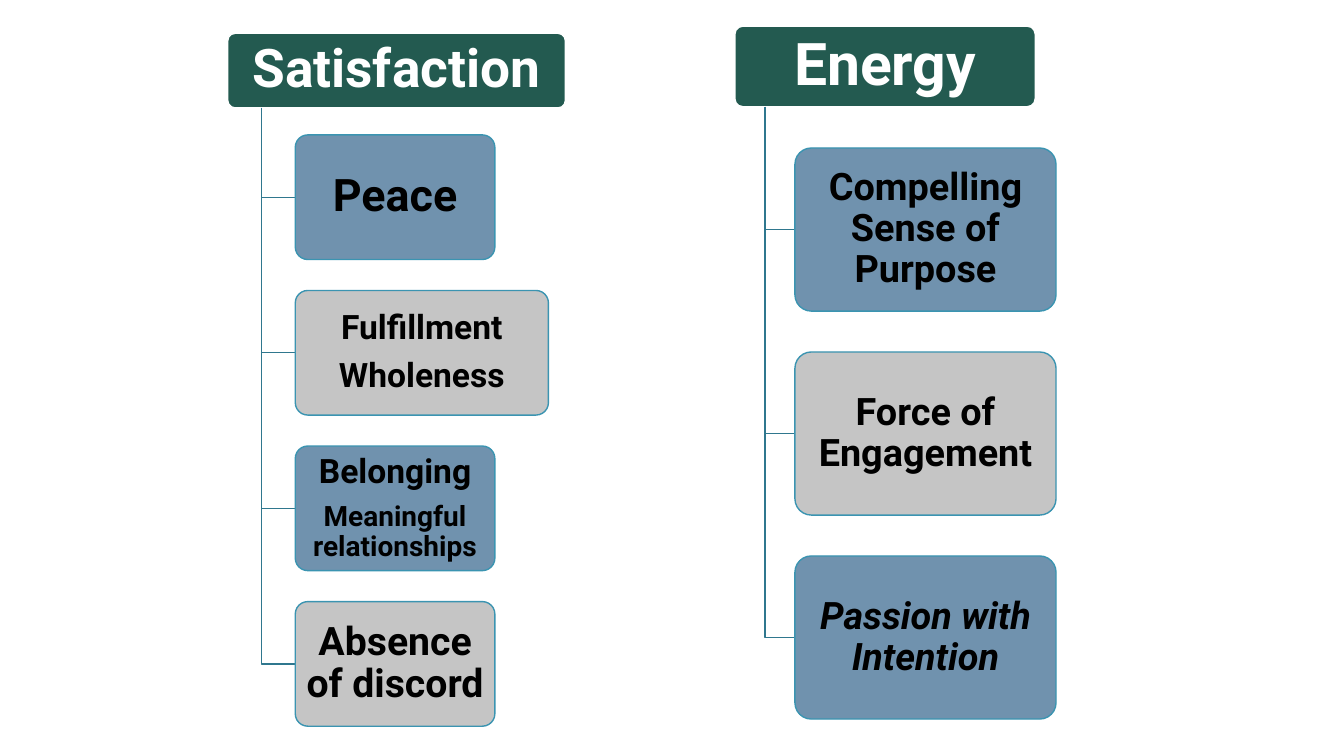
"""Build a slide with two hierarchy columns: Satisfaction and Energy."""
from dataclasses import dataclass

from lxml import etree
from pptx import Presentation
from pptx.dml.color import RGBColor
from pptx.enum.shapes import MSO_SHAPE
from pptx.enum.text import MSO_ANCHOR, PP_ALIGN
from pptx.oxml.ns import qn
from pptx.shapes.autoshape import Shape
from pptx.slide import Slide
from pptx.util import Cm, Pt

ROUNDED = MSO_SHAPE.ROUNDED_RECTANGLE
MIDDLE = MSO_ANCHOR.MIDDLE
CENTER = PP_ALIGN.CENTER


@dataclass(frozen=True)
class Theme:
    """Colours, font and type sizes of the slide."""

    font: str = "Roboto"
    header: str = "235A50"
    header_text: str = "FFFFFF"
    item_fills: tuple[str, str] = ("6187A6", "BFBFBF")
    item_text: str = "000000"
    item_line: str = "3B94B1"
    branch: str = "2F778E"
    item_opacity: int = 90
    satisfaction_size: int = 38
    energy_size: int = 42
    peace_size: int = 32
    discord_size: int = 28
    purpose_size: int = 27
    body_size: int = 24
    detail_size: int = 20


THEME = Theme()


@dataclass(frozen=True)
class TextLine:
    """One paragraph of a box."""

    text: str
    size: int
    italic: bool = False


@dataclass(frozen=True)
class Box:
    """Place of a box in centimetres."""

    left: float
    top: float
    width: float
    height: float


@dataclass(frozen=True)
class Item:
    """Text of one item, with its width in centimetres."""

    lines: tuple[TextLine, ...]
    width: float


@dataclass(frozen=True)
class Column:
    """A header with evenly spaced items below it."""

    title: TextLine
    header: Box
    first_top: float
    item_height: float
    pitch: float
    items: tuple[Item, ...]


COLUMNS = (
    Column(
        TextLine("Satisfaction", THEME.satisfaction_size),
        Box(5.74, 0.84, 8.51, 1.88), 3.4, 3.14, 3.92,
        (
            Item((TextLine("Peace", THEME.peace_size),), 5.03),
            Item((TextLine("Fulfillment", THEME.body_size),
                  TextLine("Wholeness", THEME.body_size)), 6.38),
            Item((TextLine("Belonging", THEME.body_size),
                  TextLine("Meaningful relationships", THEME.detail_size)), 5.03),
            Item((TextLine("Absence of discord", THEME.discord_size),), 5.03),
        ),
    ),
    Column(
        TextLine("Energy", THEME.energy_size),
        Box(18.52, 0.66, 7.57, 2.03), 3.73, 4.11, 5.14,
        (
            Item((TextLine("Compelling Sense of Purpose", THEME.purpose_size),), 6.58),
            Item((TextLine("Force of Engagement", THEME.purpose_size),), 6.58),
            Item((TextLine("Passion with Intention", THEME.purpose_size, True),), 6.58),
        ),
    ),
)


def set_line(shape: Shape, color: str) -> None:
    """Give a shape a one-point outline and no shadow."""
    shape.shadow.inherit = False
    shape.line.color.rgb = RGBColor.from_string(color)
    shape.line.width = Pt(1)


def write_lines(shape: Shape, lines: tuple[TextLine, ...], color: str) -> None:
    """Write centred bold paragraphs into a shape."""
    frame = shape.text_frame
    frame_format = {
        "word_wrap": True, "vertical_anchor": MIDDLE,
        "margin_left": Cm(0.15), "margin_right": Cm(0.15),
        "margin_top": Cm(0.1), "margin_bottom": Cm(0.1),
    }
    for name, value in frame_format.items():
        setattr(frame, name, value)
    for index, line in enumerate(lines):
        paragraph = frame.add_paragraph() if index else frame.paragraphs[0]
        paragraph_format = {"alignment": CENTER, "line_spacing": 0.9,
                            "space_after": Pt(0.35 * line.size)}
        for name, value in paragraph_format.items():
            setattr(paragraph, name, value)
        run = paragraph.add_run()
        run.text = line.text
        font_format = {"name": THEME.font, "size": Pt(line.size),
                       "bold": True, "italic": line.italic}
        for name, value in font_format.items():
            setattr(run.font, name, value)
        run.font.color.rgb = RGBColor.from_string(color)


def add_box(slide: Slide, box: Box, fill: str, line: str) -> Shape:
    """Draw a rounded rectangle."""
    shape = slide.shapes.add_shape(
        ROUNDED, Cm(box.left), Cm(box.top), Cm(box.width), Cm(box.height))
    shape.adjustments[0] = 0.1
    shape.fill.solid()
    shape.fill.fore_color.rgb = RGBColor.from_string(fill)
    set_line(shape, line)
    return shape


def set_opacity(shape: Shape, percent: int) -> None:
    """Make the solid fill of a shape partly transparent."""
    color = shape.fill._xPr.find(qn("a:solidFill"))[0]
    etree.SubElement(color, qn("a:alpha"), val=str(percent * 1000))


def add_branch(slide: Slide, spine: float, top: float, end: float, middle: float) -> None:
    """Draw an elbow from the header down to the side of an item."""
    builder = slide.shapes.build_freeform(Cm(spine), Cm(top))
    builder.add_line_segments(
        [(Cm(spine), Cm(middle)), (Cm(end), Cm(middle))], close=False)
    shape = builder.convert_to_shape()
    shape.fill.background()
    set_line(shape, THEME.branch)


def add_column(slide: Slide, column: Column) -> None:
    """Draw a header, its branches and its items."""
    header = column.header
    title = add_box(slide, header, THEME.header, THEME.header_text)
    write_lines(title, (column.title,), THEME.header_text)
    spine = header.left + 0.1 * header.width
    left = header.left + 0.2 * header.width
    for index, item in enumerate(column.items):
        top = column.first_top + index * column.pitch
        add_branch(slide, spine, header.top + header.height, left,
                   top + column.item_height / 2)
        shape = add_box(slide, Box(left, top, item.width, column.item_height),
                        THEME.item_fills[index % 2], THEME.item_line)
        set_opacity(shape, THEME.item_opacity)
        write_lines(shape, item.lines, THEME.item_text)


def main() -> None:
    """Build and save the presentation."""
    presentation = Presentation()
    presentation.slide_width = Cm(33.87)
    presentation.slide_height = Cm(19.05)
    slide = presentation.slides.add_slide(presentation.slide_layouts[6])
    for column in COLUMNS:
        add_column(slide, column)
    presentation.save("out.pptx")


if __name__ == "__main__":
    main()
